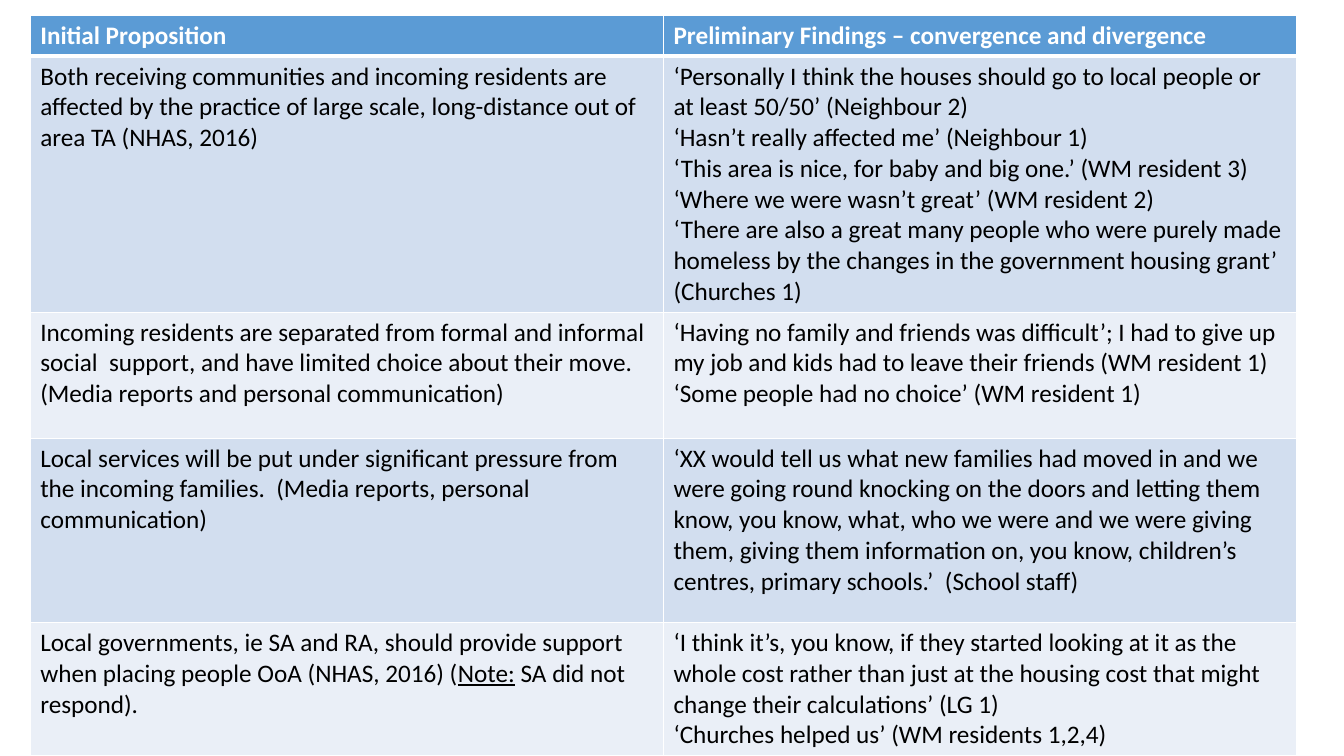
import pptx
import pptx.util
import pptx.dml.color
import pptx.oxml
import pptx.oxml.ns

COLORS = {"header": "5B9BD5", "band_dark": "D2DEEF", "band_light": "EAEFF7",
          "border": "FFFFFF", "header_text": "FFFFFF", "body_text": "000000"}
FONT = "Calibri"
TEXT_SIZE = 18
LEFT, TOP = 0.3, 0.15
COLUMN_WIDTH = 6.28
ROW_HEIGHTS = [0.39, 2.41, 1.25, 1.83, 1.25]
UNDERLINED = "Note:"

HEADINGS = (["Initial Proposition"], ["Preliminary Findings – convergence and divergence"])
FINDINGS = [
    (
        ["Both receiving communities and incoming residents are affected by the practice of "
         "large scale, long-distance out of area TA (NHAS, 2016)"],
        ["‘Personally I think the houses should go to local people or at least 50/50’ (Neighbour 2)",
         "‘Hasn’t really affected me’ (Neighbour 1)",
         "‘This area is nice, for baby and big one.’ (WM resident 3)",
         "‘Where we were wasn’t great’ (WM resident 2)",
         "‘There are also a great many people who were purely made homeless by the changes in "
         "the government housing grant’ (Churches 1)"],
    ),
    (
        ["Incoming residents are separated from formal and informal social  support, and have "
         "limited choice about their move.  (Media reports and personal communication)"],
        ["‘Having no family and friends was difficult’; I had to give up my job and kids had to "
         "leave their friends (WM resident 1)",
         "‘Some people had no choice’ (WM resident 1)"],
    ),
    (
        ["Local services will be put under significant pressure from the incoming families.  "
         "(Media reports, personal communication)"],
        ["‘XX would tell us what new families had moved in and we were going round knocking on "
         "the doors and letting them know, you know, what, who we were and we were giving them, "
         "giving them information on, you know, children’s centres, primary schools.’  (School staff)"],
    ),
    (
        ["Local governments, ie SA and RA, should provide support when placing people OoA "
         "(NHAS, 2016) (Note: SA did not respond)."],
        ["‘I think it’s, you know, if they started looking at it as the whole cost rather than "
         "just at the housing cost that might change their calculations’ (LG 1)",
         "‘Churches helped us’ (WM residents 1,2,4)"],
    ),
]


def add_text(para, text, color, bold=False, underline=False):
    span = para.add_run()
    span.text = text
    span.font.name = FONT
    span.font.size = pptx.util.Pt(TEXT_SIZE)
    span.font.bold = bold
    span.font.underline = underline
    span.font.color.rgb = pptx.dml.color.RGBColor.from_string(COLORS[color])


def set_borders(cell, bottom, top):
    properties = cell._tc.get_or_add_tcPr()
    widths = {"lnL": 1, "lnR": 1, "lnT": top, "lnB": bottom}
    for position, (side, width) in enumerate(widths.items()):
        line = pptx.oxml.parse_xml(
            f'<a:{side} {pptx.oxml.ns.nsdecls("a")} w="{pptx.util.Pt(width)}">'
            f'<a:solidFill><a:srgbClr val="{COLORS["border"]}"/></a:solidFill></a:{side}>')
        properties.insert(position, line)


def fill_cell(cell, lines, row):
    is_header = row == 0
    fill = "header" if is_header else "band_dark" if row % 2 else "band_light"
    color = "header_text" if is_header else "body_text"
    cell.fill.solid()
    cell.fill.fore_color.rgb = pptx.dml.color.RGBColor.from_string(COLORS[fill])
    set_borders(cell, bottom=3 if is_header else 1, top=3 if row == 1 else 1)
    frame = cell.text_frame
    for index, line in enumerate(lines):
        para = frame.add_paragraph() if index else frame.paragraphs[0]
        for part in line.partition(UNDERLINED):
            if part:
                add_text(para, part, color, bold=is_header, underline=part == UNDERLINED)


def main():
    deck = pptx.Presentation()
    deck.slide_width = pptx.util.Inches(13.33)
    deck.slide_height = pptx.util.Inches(7.5)
    page = deck.slides.add_slide(deck.slide_layouts[6])

    rows = [HEADINGS] + FINDINGS
    columns = len(HEADINGS)
    table = page.shapes.add_table(
        len(rows), columns, pptx.util.Inches(LEFT), pptx.util.Inches(TOP),
        pptx.util.Inches(COLUMN_WIDTH * columns), pptx.util.Inches(sum(ROW_HEIGHTS))).table
    table.horz_banding = False
    for column in table.columns:
        column.width = pptx.util.Inches(COLUMN_WIDTH)
    for row, (height, entries) in enumerate(zip(ROW_HEIGHTS, rows)):
        table.rows[row].height = pptx.util.Inches(height)
        for column, lines in enumerate(entries):
            fill_cell(table.cell(row, column), lines, row)

    deck.save("out.pptx")


if __name__ == "__main__":
    main()
